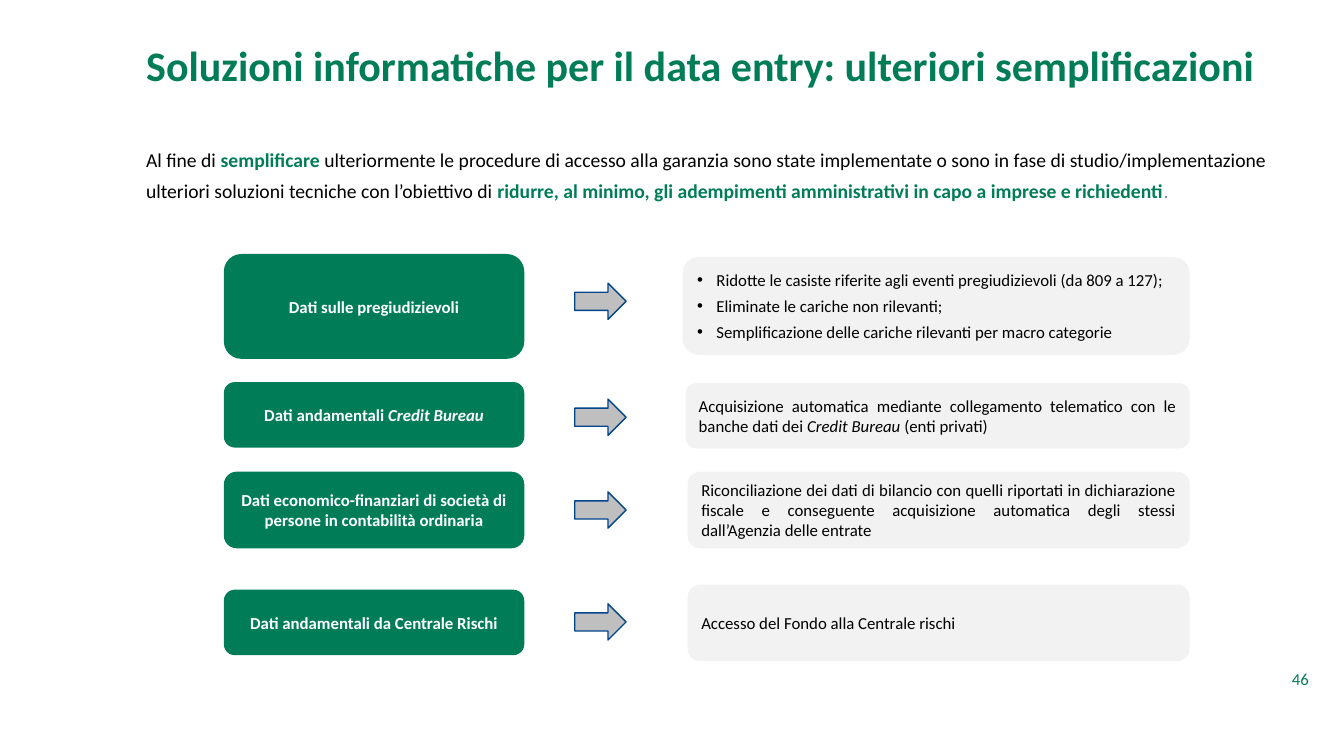
from dataclasses import dataclass

from lxml.etree import SubElement
from pptx import Presentation
from pptx.dml.color import RGBColor
from pptx.enum.shapes import MSO_SHAPE
from pptx.enum.text import MSO_ANCHOR, MSO_AUTO_SIZE, PP_ALIGN
from pptx.oxml.ns import qn
from pptx.util import Inches, Pt


@dataclass(frozen=True)
class Theme:
    font: str = "Calibri"
    green: RGBColor = RGBColor(0x00, 0x7D, 0x57)
    black: RGBColor = RGBColor(0x00, 0x00, 0x00)
    white: RGBColor = RGBColor(0xFF, 0xFF, 0xFF)
    stop: RGBColor = RGBColor(0x81, 0x8A, 0x8F)
    panel: RGBColor = RGBColor(0xF2, 0xF2, 0xF2)
    arrow: RGBColor = RGBColor(0xBF, 0xBF, 0xBF)
    outline: RGBColor = RGBColor(0x00, 0x45, 0x8A)
    title_size: int = 30
    intro_size: int = 14
    body_size: int = 12


THEME = Theme()

TITLE = "Soluzioni informatiche per il data entry: ulteriori semplificazioni"
PAGE_NUMBER = "46"
INTRO = [
    ("Al fine di ", THEME.black, False),
    ("semplificare ", THEME.green, True),
    ("ulteriormente le procedure di accesso alla garanzia sono state implementate o sono in fase di "
     "studio/implementazione ulteriori soluzioni tecniche con l’obiettivo di ", THEME.black, False),
    ("ridurre, al minimo, gli adempimenti amministrativi in capo a imprese e richiedenti", THEME.green, True),
    (".", THEME.stop, False),
]
ROWS = [
    {
        "label": [("Dati sulle pregiudizievoli", False)],
        "details": [
            [("Ridotte le casiste riferite agli eventi pregiudizievoli (da 809 a 127);", False)],
            [("Eliminate le cariche non rilevanti;", False)],
            [("Semplificazione delle cariche rilevanti per macro categorie", False)],
        ],
        "label_span": (2.52, 1.04),
        "detail_span": (2.55, 0.97),
        "detail_left": 6.77,
        "arrow_top": 2.81,
    },
    {
        "label": [("Dati andamentali ", False), ("Credit Bureau", True)],
        "details": [[
            ("Acquisizione automatica mediante collegamento telematico con le banche dati dei ", False),
            ("Credit Bureau ", True),
            ("(enti privati)", False),
        ]],
        "label_span": (3.79, 0.65),
        "detail_span": (3.8, 0.65),
        "detail_left": 6.8,
        "arrow_top": 3.96,
    },
    {
        "label": [("Dati economico-finanziari di società di persone in contabilità ordinaria", False)],
        "details": [[
            ("Riconciliazione dei dati di bilancio con quelli riportati in dichiarazione fiscale e "
             "conseguente acquisizione automatica degli stessi dall’Agenzia delle entrate", False),
        ]],
        "label_span": (4.68, 0.76),
        "detail_span": (4.68, 0.76),
        "detail_left": 6.82,
        "arrow_top": 4.88,
    },
    {
        "label": [("Dati andamentali da Centrale Rischi", False)],
        "details": [[("Accesso del Fondo alla Centrale rischi", False)]],
        "label_span": (5.85, 0.65),
        "detail_span": (5.8, 0.76),
        "detail_left": 6.82,
        "arrow_top": 5.99,
    },
]
LABEL_LEFT, LABEL_WIDTH = 2.22, 2.98
ARROW_LEFT, ARROW_WIDTH, ARROW_HEIGHT = 5.7, 0.51, 0.36
DETAIL_RIGHT = 11.8
TEXT_LEFT, TEXT_WIDTH = 1.35, 11.42
BULLET_INDENT = Inches(0.19)


def set_font(font, size, color, bold=False):
    font.name = THEME.font
    font.size = Pt(size)
    font.bold = bold
    font.color.rgb = color


def add_bullet(paragraph):
    properties = paragraph._p.get_or_add_pPr()
    properties.set("marL", str(BULLET_INDENT))
    properties.set("indent", str(-BULLET_INDENT))
    SubElement(properties, qn("a:buFont"), typeface="Arial")
    SubElement(properties, qn("a:buChar"), char="•")


def add_block(slide, preset, left, top, width, height, fill):
    shape = slide.shapes.add_shape(preset, Inches(left), Inches(top), Inches(width), Inches(height))
    shape.shadow.inherit = False
    shape.fill.solid()
    shape.fill.fore_color.rgb = fill
    shape.line.fill.background()
    return shape


def write_paragraphs(shape, paragraphs, alignment, color, bold=False):
    frame = shape.text_frame
    frame.word_wrap = True
    frame.vertical_anchor = MSO_ANCHOR.MIDDLE
    for index, runs in enumerate(paragraphs):
        paragraph = frame.paragraphs[0] if index == 0 else frame.add_paragraph()
        paragraph.alignment = alignment
        if len(paragraphs) > 1:
            paragraph.space_before = Pt(2 if index else 0)
            paragraph.space_after = Pt(2)
            add_bullet(paragraph)
        set_font(paragraph.font, THEME.body_size, color, bold)
        for text, italic in runs:
            run = paragraph.add_run()
            run.text = text
            if italic:
                run.font.italic = True


def add_title(slide):
    title = slide.shapes.title
    title.left, title.top = Inches(TEXT_LEFT), Inches(0.4)
    title.width, title.height = Inches(TEXT_WIDTH), Inches(1.14)
    frame = title.text_frame
    frame.text = TITLE
    frame.word_wrap = True
    frame.auto_size = MSO_AUTO_SIZE.NONE
    frame.vertical_anchor = MSO_ANCHOR.TOP
    paragraph = frame.paragraphs[0]
    paragraph.alignment = PP_ALIGN.LEFT
    paragraph.line_spacing = 0.9
    set_font(paragraph.font, THEME.title_size, THEME.green, True)


def add_intro(slide):
    box = slide.shapes.add_textbox(Inches(TEXT_LEFT), Inches(1.35), Inches(TEXT_WIDTH), Inches(0.71))
    box.text_frame.word_wrap = True
    paragraph = box.text_frame.paragraphs[0]
    paragraph.line_spacing = 1.3
    for text, color, bold in INTRO:
        run = paragraph.add_run()
        run.text = text
        set_font(run.font, THEME.intro_size, color, bold)


def add_page_number(slide):
    box = slide.shapes.add_textbox(Inches(12.11), Inches(6.62), Inches(0.97), Inches(0.26))
    frame = box.text_frame
    frame.text = PAGE_NUMBER
    frame.word_wrap = True
    frame.vertical_anchor = MSO_ANCHOR.BOTTOM
    paragraph = frame.paragraphs[0]
    paragraph.alignment = PP_ALIGN.RIGHT
    set_font(paragraph.font, THEME.body_size, THEME.green)


def add_row(slide, row):
    top, height = row["label_span"]
    label = add_block(slide, MSO_SHAPE.ROUNDED_RECTANGLE, LABEL_LEFT, top, LABEL_WIDTH, height, THEME.green)
    write_paragraphs(label, [row["label"]], PP_ALIGN.CENTER, THEME.white, True)

    left = row["detail_left"]
    top, height = row["detail_span"]
    detail = add_block(slide, MSO_SHAPE.ROUNDED_RECTANGLE, left, top, DETAIL_RIGHT - left, height, THEME.panel)
    write_paragraphs(detail, row["details"], PP_ALIGN.JUSTIFY, THEME.black)

    arrow = add_block(
        slide, MSO_SHAPE.RIGHT_ARROW, ARROW_LEFT, row["arrow_top"], ARROW_WIDTH, ARROW_HEIGHT, THEME.arrow
    )
    arrow.line.color.rgb = THEME.outline
    arrow.line.width = Pt(1)


def main():
    presentation = Presentation()
    presentation.slide_width, presentation.slide_height = Inches(13.33), Inches(7.5)
    slide = presentation.slides.add_slide(presentation.slide_layouts[5])
    add_title(slide)
    add_intro(slide)
    for row in ROWS:
        add_row(slide, row)
    add_page_number(slide)
    presentation.save("out.pptx")


if __name__ == "__main__":
    main()
